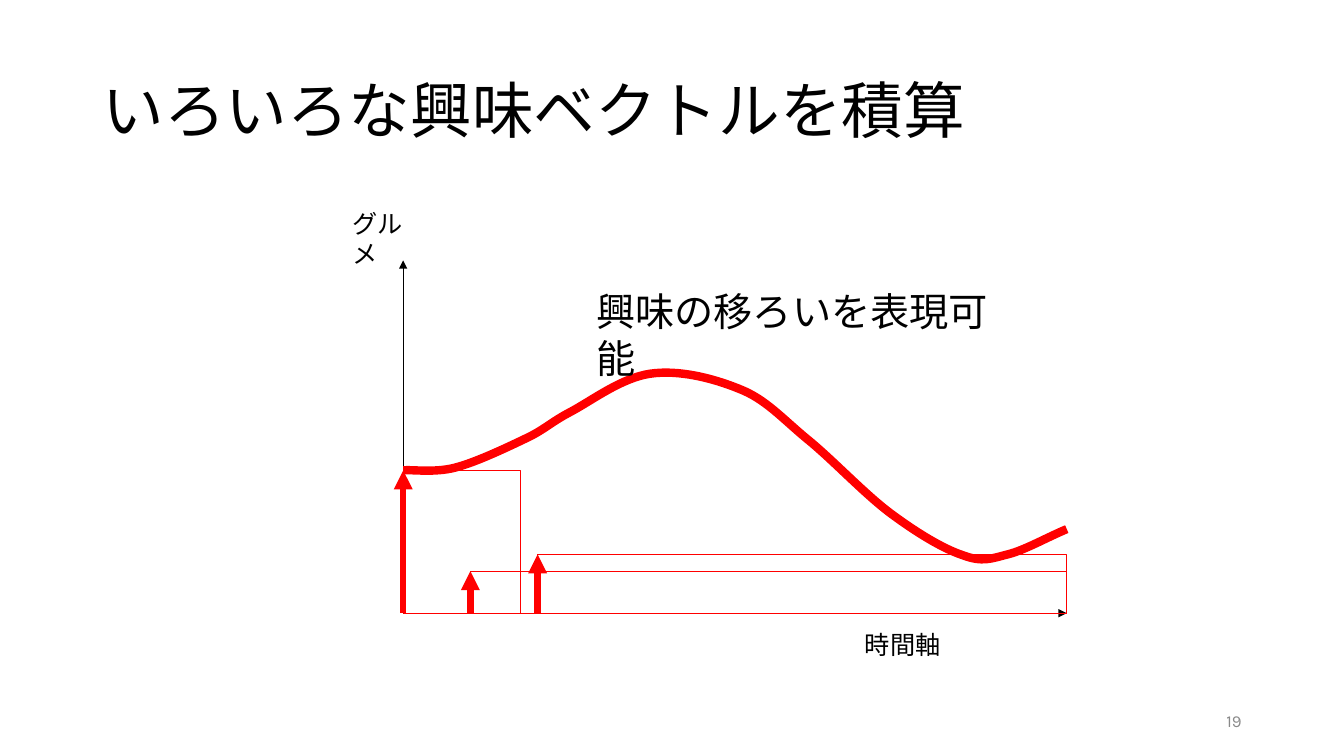
from pptx import Presentation
from pptx.dml.color import RGBColor
from pptx.enum.shapes import MSO_CONNECTOR as Link, MSO_SHAPE as Kind
from pptx.enum.text import MSO_ANCHOR as Anchor, MSO_AUTO_SIZE as Fit, PP_ALIGN as Align
from pptx.oxml.ns import qn
from pptx.util import Inches, Pt
from lxml.etree import SubElement as Sub

BLACK = RGBColor(0, 0, 0)
RED = RGBColor(255, 0, 0)
GRAY = RGBColor(0x89, 0x89, 0x89)
COLS, ROWS = 160, 90
LEFT, RIGHT, BASE = 48, 127, 73

TREND = [
    (48, 56),
    (49.1, 55.9), (51.7, 56.3), (54.1, 55.7),
    (56.5, 55.1), (60.1, 53.4), (62.4, 52.3),
    (64.8, 51.2), (65.5, 50.3), (68, 49),
    (70.6, 47.6), (74, 45), (77.4, 44.5),
    (80.8, 44), (84.8, 45), (88, 46.3),
    (91.1, 47.5), (93, 49.7), (96, 52.2),
    (99, 54.6), (102.8, 58.7), (106, 61.1),
    (109.1, 63.4), (112.2, 65.3), (114.6, 66.1),
    (117, 67), (118, 66.5), (120, 66),
    (122, 65.5), (124.6, 64), (127, 63),
]
PULSES = [(56, 68, RIGHT), (64, 66, RIGHT), (LEFT, 56, 62)]


class Board:
    def __init__(self, deck):
        self.wide = deck.slide_width
        self.high = deck.slide_height
        self.slide = deck.slides.add_slide(deck.slide_layouts[5])
        self.shapes = self.slide.shapes

    def x(self, col):
        return round(self.wide * col / COLS)

    def y(self, row):
        return round(self.high * row / ROWS)

    def fill(self, frame, text, size, font, color, align=Align.LEFT):
        frame.text = text
        frame.word_wrap = True
        frame.auto_size = Fit.NONE
        para = frame.paragraphs[0]
        para.alignment = align
        style = para.runs[0].font
        style.size, style.name = Pt(size), font
        style.color.rgb = color
        return para

    def title(self, text, col, row, cols, rows):
        box = self.shapes.title
        box.left, box.top = self.x(col), self.y(row)
        box.width, box.height = self.x(cols), self.y(rows)
        para = self.fill(box.text_frame, text, 44, "Calibri", BLACK)
        para.line_spacing = 0.9
        box.text_frame.vertical_anchor = Anchor.MIDDLE

    def label(self, text, col, row, cols, rows, size, font="Arial",
              color=BLACK, align=Align.LEFT, anchor=Anchor.TOP):
        box = self.shapes.add_textbox(
            self.x(col), self.y(row), self.x(cols), self.y(rows))
        self.fill(box.text_frame, text, size, font, color, align)
        box.text_frame.vertical_anchor = anchor

    def arrow(self, start, end, color, width, home=None):
        line = (home or self.shapes).add_connector(
            Link.STRAIGHT, self.x(start[0]), self.y(start[1]),
            self.x(end[0]), self.y(end[1]))
        line.line.color.rgb = color
        line.line.width = Pt(width)
        props = line.element.spPr
        Sub(props.find(qn("a:ln")), qn("a:tailEnd"), type="triangle")
        Sub(props, qn("a:effectLst"))

    def pulse(self, col, row, end):
        home = self.shapes.add_group_shape().shapes
        self.arrow((col, BASE), (col, row), RED, 4.5, home)
        box = home.add_shape(
            Kind.RECTANGLE, self.x(col), self.y(row),
            self.x(end - col), self.y(BASE - row))
        self.trace(box, 0.75)

    def trace(self, shape, width):
        shape.shadow.inherit = False
        shape.fill.background()
        shape.line.color.rgb = RED
        shape.line.width = Pt(width)

    def curve(self, spots, width):
        spots = [(self.x(col), self.y(row)) for col, row in spots]
        pen = self.shapes.build_freeform(*spots[0])
        pen.add_line_segments(spots[1:], close=False)
        shape = pen.convert_to_shape()
        self.trace(shape, width)
        route = next(shape.element.iter(qn("a:path")))
        steps = route.findall(qn("a:lnTo"))
        for i in range(0, len(steps), 3):
            bend = Sub(route, qn("a:cubicBezTo"))
            for step in steps[i:i + 3]:
                bend.append(step[0])
                route.remove(step)


def main():
    deck = Presentation()
    deck.slide_width, deck.slide_height = Inches(13.33), Inches(7.5)
    board = Board(deck)
    board.title("いろいろな興味ベクトルを積算", 11, 4.8, 138, 17.4)
    board.arrow((LEFT, BASE), (LEFT, 31), BLACK, 0.75)
    board.label("グルメ", 40.8, 24.2, 10.6, 4.8, 18)
    board.label("時間軸", 101.8, 74.3, 11.4, 4.8, 18)
    board.curve(TREND, 6)
    board.arrow((LEFT, BASE), (RIGHT, BASE), BLACK, 0.75)
    for pulse in PULSES:
        board.pulse(*pulse)
    board.label("興味の移ろいを表現可能", 69.8, 33.6, 52.1, 6.8, 28)
    board.label("19", 113, 83.4, 36, 4.8, 12, "Karla", GRAY,
                Align.RIGHT, Anchor.MIDDLE)
    deck.save("out.pptx")


if __name__ == "__main__":
    main()
